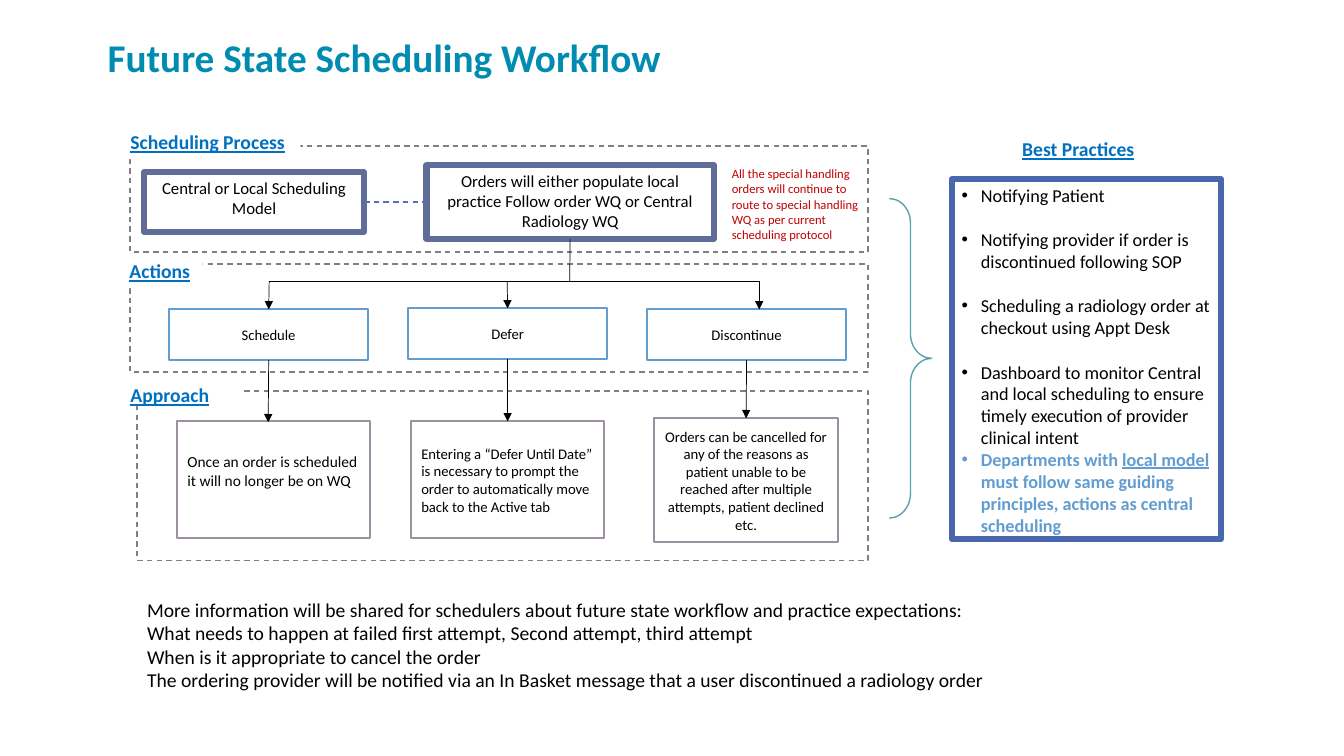
from pptx import Presentation
from pptx.dml.color import RGBColor
from pptx.enum.dml import MSO_LINE
from pptx.enum.shapes import MSO_CONNECTOR, MSO_SHAPE
from pptx.enum.text import MSO_ANCHOR, PP_ALIGN
from pptx.oxml.ns import qn
from pptx.util import Pt
from lxml.etree import SubElement

PX = 9144  # EMU per px, 100 px to the inch
TOP, LEFT, BOTTOM, RIGHT = range(4)  # connection sites of a rectangle

THEME = {
    "font": "Calibri",
    "title": "008BB0", "label": "0070C0", "text": "000000", "warning": "C00000",
    "frame": "808080", "process": "616D99", "action": "629DD1", "approach": "9D90A0",
    "practice": "4A66AC", "brace": "5AA2AE", "link": "566EB5", "white": "FFFFFF",
    "title_pt": 28, "label_pt": 14, "note_pt": 14, "practice_pt": 13,
    "process_pt": 12, "step_pt": 10.5, "schedule_pt": 11, "warning_pt": 9,
    "thick": 4.33, "medium": 1.5, "thin": 1, "arrow": 0.5,
}

TITLE = ("Future State Scheduling Workflow", (97, 20, 1169, 72))
FRAMES = [(129, 145, 732, 105), (129, 262, 732, 107), (136, 388, 725, 168)]
LABELS = [
    ("Scheduling Process", (114, 124, 184, 34)),
    ("Actions", (116, 252, 85, 34)),
    ("Approach", (97, 375, 143, 28)),
    ("Best Practices", (982, 131, 175, 28)),
]
PROCESSES = [
    ("Central or Local Scheduling Model", (143, 171, 218, 59)),
    ("Orders will either populate local practice Follow order WQ or Central Radiology WQ",
     (423, 164, 285, 73)),
]
ACTIONS = [
    ("Schedule", (168, 307, 197, 50)),
    ("Defer", (405, 306, 197, 50)),
    ("Discontinue", (642, 307, 197, 50)),
]
# text, box, alignment, type size, bottom inset
APPROACHES = [
    ("Once an order is scheduled it will no longer be on WQ",
     (176, 418, 191, 116), PP_ALIGN.LEFT, "schedule_pt", 23),
    ("Entering a “Defer Until Date” is necessary to prompt the order to automatically "
     "move back to the Active tab",
     (408, 418, 191, 116), PP_ALIGN.LEFT, "step_pt", 5),
    ("Orders can be cancelled for any of the reasons as patient unable to be reached "
     "after multiple attempts, patient declined etc.",
     (649, 415, 182, 123), PP_ALIGN.CENTER, "step_pt", 5),
]
SPECIAL_HANDLING = ("All the special handling orders will continue to route to special "
                    "handling WQ as per current scheduling protocol", (716, 160, 153, 86))
PRACTICES = [
    "Notifying Patient",
    "Notifying provider if order is discontinued following SOP",
    "Scheduling a radiology order at checkout using Appt Desk",
    "Dashboard to monitor Central and local scheduling to ensure timely execution of "
    "provider clinical intent",
]
LOCAL_PRACTICE = ["Departments with ", "local model",
                  " must follow same guiding principles, actions as central scheduling"]
PRACTICES_BOX = (944, 178, 267, 357)
BRACE_BOX = (882, 197, 42, 317)
NOTES = [
    "More information will be shared for schedulers about future state workflow and "
    "practice expectations:",
    "What needs to happen at failed first attempt, Second attempt, third attempt",
    "When is it appropriate to cancel the order",
    "The ordering provider will be notified via an In Basket message that a user "
    "discontinued a radiology order",
]
NOTES_BOX = (136, 588, 1075, 104)
BUS_Y = 279
DROP_XS = [267, 503, 753]
SCHEDULE_ARROW_END = (266, 419)

prs = Presentation()
prs.slide_width, prs.slide_height = 1333 * PX, 750 * PX
slide = prs.slides.add_slide(prs.slide_layouts[6])


def color(name):
    return RGBColor.from_string(THEME[name])


def emu(lengths):
    return [length * PX for length in lengths]


def style_line(line, ink, width, dashed=False):
    line.color.rgb = color(ink)
    line.width = Pt(THEME[width])
    if dashed:
        line.dash_style = MSO_LINE.DASH


def style_font(font, size, ink="text", bold=False, underline=False):
    font.name = THEME["font"]
    font.size = Pt(THEME[size])
    font.color.rgb = color(ink)
    font.bold, font.underline = bold, underline


def write(owner, lines, size, align=PP_ALIGN.LEFT, anchor=MSO_ANCHOR.TOP, **font_style):
    frame = owner.text_frame
    frame.word_wrap = True
    frame.vertical_anchor = anchor
    frame.text = "\n".join(lines)
    for paragraph in frame.paragraphs:
        paragraph.alignment = align
        for run in paragraph.runs:
            style_font(run.font, size, **font_style)
    return frame


def add_box(box, ink=None, width="thin", dashed=False, filled=False, kind=MSO_SHAPE.RECTANGLE):
    shape = slide.shapes.add_shape(kind, *emu(box))
    shape.shadow.inherit = False
    if filled:
        shape.fill.solid()
        shape.fill.fore_color.rgb = color("white")
    else:
        shape.fill.background()
    if ink:
        style_line(shape.line, ink, width, dashed)
    else:
        shape.line.fill.background()
    return shape


def add_text(lines, box, size, **text_style):
    return write(slide.shapes.add_textbox(*emu(box)), lines, size, **text_style)


def connect(start, end, ink="text", width="arrow", dashed=False, arrow=False):
    """Each end is an (x, y) point or a (shape, connection site) pair."""
    points = [(0, 0) if hasattr(e[0], "shape_id") else e for e in (start, end)]
    link = slide.shapes.add_connector(MSO_CONNECTOR.STRAIGHT, *emu(points[0] + points[1]))
    for join, target in ((link.begin_connect, start), (link.end_connect, end)):
        if hasattr(target[0], "shape_id"):
            join(*target)
    style_line(link.line, ink, width, dashed)
    if arrow:
        SubElement(link.line._get_or_add_ln(), qn("a:tailEnd"), type="triangle")
    SubElement(link._element.spPr, qn("a:effectLst"))


def add_bullet(paragraph):
    indent = 19 * PX
    properties = paragraph._p.get_or_add_pPr()
    properties.set("marL", str(indent))
    properties.set("indent", str(-indent))
    SubElement(properties, qn("a:buFont"), typeface="Arial")
    SubElement(properties, qn("a:buChar"), char="•")


title, title_box = TITLE
add_text([title], title_box, "title_pt", anchor=MSO_ANCHOR.MIDDLE, ink="title", bold=True)

for frame_box in FRAMES:
    add_box(frame_box, "frame", dashed=True)

for label, box in LABELS:
    write(add_box(box, filled=True), [label], "label_pt", PP_ALIGN.CENTER,
          ink="label", bold=True, underline=True)

processes, actions, approaches = [], [], []
for process, box in PROCESSES:
    processes.append(add_box(box, "process", "thick", filled=True))
    write(processes[-1], [process], "process_pt", PP_ALIGN.CENTER)
for action, box in ACTIONS:
    actions.append(add_box(box, "action", "medium"))
    write(actions[-1], [action], "step_pt", PP_ALIGN.CENTER, MSO_ANCHOR.MIDDLE)
for approach, box, align, size, inset in APPROACHES:
    approaches.append(add_box(box, "approach", "medium"))
    frame = write(approaches[-1], [approach], size, align, MSO_ANCHOR.MIDDLE)
    frame.margin_bottom = inset * PX

scheduling_model, order_routing = processes
schedule, defer, discontinue = actions
connect((scheduling_model, RIGHT), (order_routing, LEFT), "link", "thin", dashed=True)
connect((order_routing, BOTTOM), (565, BUS_Y))
connect((DROP_XS[0], BUS_Y), (DROP_XS[-1], BUS_Y))
drop_ends = [(schedule, TOP), (defer, TOP), (DROP_XS[-1], 307)]
for x, drop_end in zip(DROP_XS, drop_ends):
    connect((x, BUS_Y), drop_end, arrow=True)
approach_ends = [SCHEDULE_ARROW_END] + [(approach, TOP) for approach in approaches[1:]]
for action, approach_end in zip(actions, approach_ends):
    connect((action, BOTTOM), approach_end, arrow=True)

warning, warning_box = SPECIAL_HANDLING
add_text([warning], warning_box, "warning_pt", ink="warning")

brace = add_box(BRACE_BOX, "brace", kind=MSO_SHAPE.RIGHT_BRACE)
brace.adjustments[0], brace.adjustments[1] = 0.58, 0.5

practices = write(add_box(PRACTICES_BOX, "practice", "thick"), PRACTICES, "practice_pt")
for paragraph in practices.paragraphs:
    add_bullet(paragraph)
for paragraph in practices.paragraphs[1:]:
    paragraph.space_before = Pt(16)
local_practice = practices.add_paragraph()
local_practice.alignment = PP_ALIGN.LEFT
add_bullet(local_practice)
for part in LOCAL_PRACTICE:
    run = local_practice.add_run()
    run.text = part
    style_font(run.font, "practice_pt", "action", bold=True, underline=part == "local model")

add_text(NOTES, NOTES_BOX, "note_pt")

prs.save("out.pptx")
